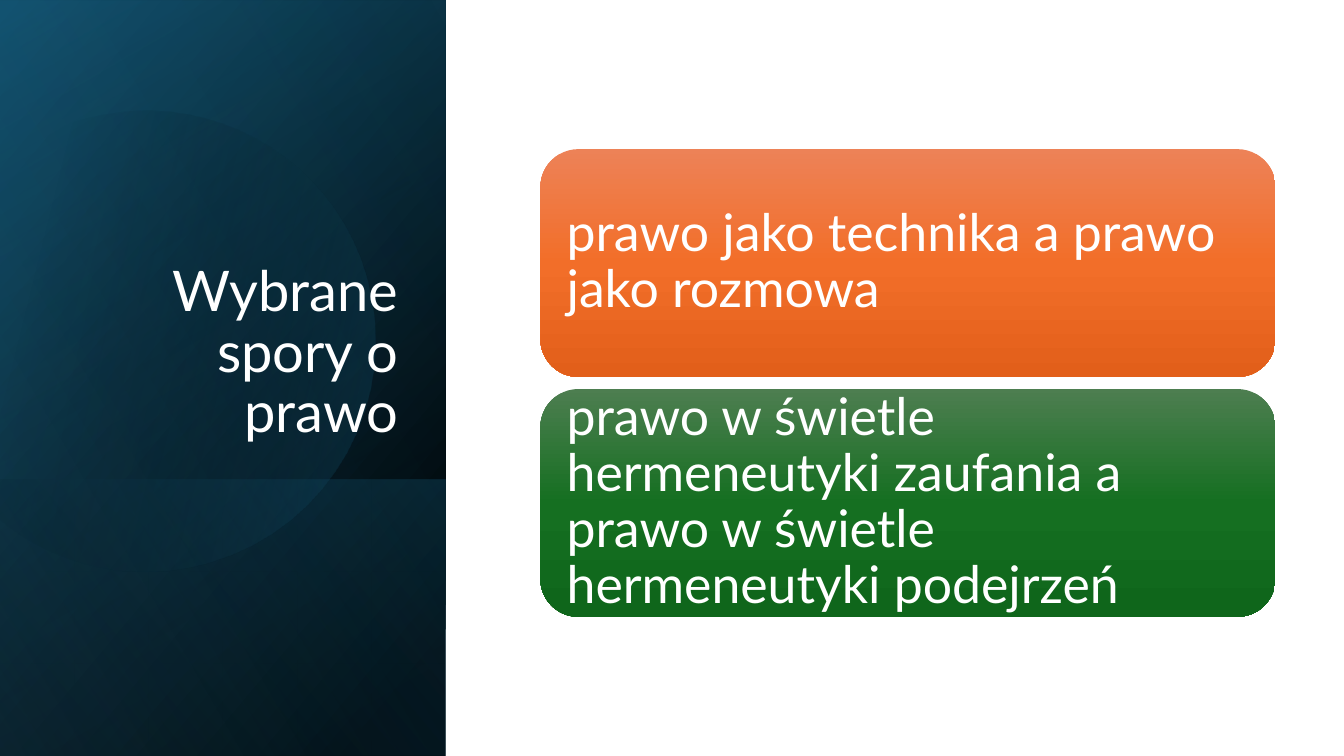
import math
from dataclasses import dataclass

import pptx
import pptx.dml.color
import pptx.enum.shapes
import pptx.enum.text
import pptx.oxml
import pptx.oxml.ns
import pptx.util

Inches = pptx.util.Inches
Shapes = pptx.enum.shapes.MSO_SHAPE
Anchor = pptx.enum.text.MSO_ANCHOR
Align = pptx.enum.text.PP_ALIGN
qn = pptx.oxml.ns.qn
Point = tuple[float, float]


@dataclass
class Stop:
    position: int
    shade: str
    opacity: int = 100


@dataclass
class Gradient:
    angle: int
    stops: list[Stop]


@dataclass
class Pane:
    left: float
    top: float
    width: float
    gradient: Gradient


@dataclass
class Card:
    text: str
    shades: tuple[str, str, str]


PANEL_WIDTH = 4.42
CARD_LEFT, CARD_TOP, CARD_WIDTH, CARD_HEIGHT, CARD_PITCH = 5.36, 1.48, 7.29, 2.26, 2.38

# Side panel layers, each turned a quarter and mirrored
PANES = [
    Pane(-1.54, 1.54, 7.5, Gradient(50, [Stop(8, "000000"), Stop(100, "104862")])),
    Pane(-1.54, 1.55, 7.5, Gradient(30, [Stop(0, "000000", 0), Stop(99, "156082", 46)])),
    Pane(0.84, 3.92, 2.74, Gradient(130, [Stop(2, "156082", 29), Stop(100, "000000", 30)])),
]
GLOSS = Pane(-1.54, 1.54, 7.5, Gradient(120, [Stop(0, "000000", 0), Stop(99, "46B1E1", 11)]))

# Cut disc: curve segments as (control, control, end), tilted about its centre
DISC_TILT = 343.9
DISC_CENTRE = (1.59, 3.35)
DISC_START = (1.49, 1.1)
DISC_RIGHT = [
    ((2.46, 1.12), (3.35, 1.77), (3.63, 2.75)),
    ((3.98, 3.97), (3.28, 5.23), (2.07, 5.58)),
    ((1.31, 5.8), (0.53, 5.61), (-0.03, 5.14)),
]
DISC_EDGE = [(-0.15, 5.03), (-0.15, 1.75), (0, 1.61)]
DISC_LEFT = [
    ((0.23, 1.42), (0.5, 1.28), (0.8, 1.19)),
    ((1.03, 1.13), (1.26, 1.1), (1.49, 1.1)),
]
DISC_GRADIENT = Gradient(30, [Stop(29, "000000", 0), Stop(100, "156082", 43)])

CARDS = [
    Card("prawo jako technika a prawo jako rozmowa", ("ED8257", "F26E29", "E25F1A")),
    Card("prawo w świetle hermeneutyki zaufania a prawo w świetle hermeneutyki podejrzeń",
         ("4D7E50", "156F21", "0F661B")),
]


def colour(shade: str) -> pptx.dml.color.RGBColor:
    return pptx.dml.color.RGBColor.from_string(shade)


def paint(shape, gradient: Gradient) -> None:
    """Fill a shape with a gradient, without outline or shadow."""
    shape.shadow.inherit = False
    shape.line.fill.background()
    shape.fill.gradient()
    fill = shape.element.spPr.find(qn("a:gradFill"))
    fill.find(qn("a:lin")).set("ang", str(gradient.angle * 60000))
    stop_list = fill.find(qn("a:gsLst"))
    for old in list(stop_list):
        stop_list.remove(old)
    for stop in gradient.stops:
        stop_list.append(pptx.oxml.parse_xml(
            f'<a:gs {pptx.oxml.ns.nsdecls("a")} pos="{stop.position * 1000}">'
            f'<a:srgbClr val="{colour(stop.shade)}">'
            f'<a:alpha val="{stop.opacity * 1000}"/></a:srgbClr></a:gs>'))


def write(shape, text: str, size: int, inset: float, anchor, align) -> None:
    frame = shape.text_frame
    margins = {f"margin_{side}": Inches(inset) for side in ("left", "right")}
    if anchor == Anchor.MIDDLE:
        margins |= {f"margin_{side}": Inches(inset) for side in ("top", "bottom")}
    for name, value in {"word_wrap": True, "vertical_anchor": anchor, **margins}.items():
        setattr(frame, name, value)
    para = frame.paragraphs[0]
    para.alignment, para.line_spacing = align, 0.9
    span = para.add_run()
    span.text = text
    for name, value in {"name": "Lato", "size": pptx.util.Pt(size)}.items():
        setattr(span.font, name, value)
    span.font.color.rgb = colour("FFFFFF")


def add_pane(page, pane: Pane) -> None:
    shape = page.shapes.add_shape(
        Shapes.RECTANGLE, Inches(pane.left), Inches(pane.top),
        Inches(pane.width), Inches(PANEL_WIDTH))
    shape.rotation = 90
    shape.element.spPr.find(qn("a:xfrm")).set("flipH", "1")
    paint(shape, pane.gradient)


def trace(start: Point, curves: list, steps: int = 16) -> list[Point]:
    """Sample a chain of cubic curves."""
    points = []
    for first, second, end in curves:
        for step in range(1, steps + 1):
            t = step / steps
            u = 1 - t
            points.append(tuple(
                u**3 * a + 3 * u * u * t * b + 3 * u * t * t * c + t**3 * d
                for a, b, c, d in zip(start, first, second, end)))
        start = end
    return points


def untilt(point: Point) -> Point:
    """Turn a point back about the disc centre, before the tilt is applied."""
    turn = math.radians(360 - DISC_TILT)
    x, y = point[0] - DISC_CENTRE[0], point[1] - DISC_CENTRE[1]
    return (Inches(DISC_CENTRE[0] + x * math.cos(turn) - y * math.sin(turn)),
            Inches(DISC_CENTRE[1] + x * math.sin(turn) + y * math.cos(turn)))


def add_disc(page) -> None:
    outline = [DISC_START, *trace(DISC_START, DISC_RIGHT), *DISC_EDGE,
               *trace(DISC_EDGE[-1], DISC_LEFT)]
    first, *others = [untilt(point) for point in outline]
    builder = page.shapes.build_freeform(*first)
    builder.add_line_segments(others, close=True)
    disc = builder.convert_to_shape()
    disc.rotation = DISC_TILT
    paint(disc, DISC_GRADIENT)


def add_card(page, card: Card, top: float) -> None:
    box = page.shapes.add_shape(
        Shapes.ROUNDED_RECTANGLE, Inches(CARD_LEFT), Inches(top),
        Inches(CARD_WIDTH), Inches(CARD_HEIGHT))
    paint(box, Gradient(90, [Stop(50 * i, shade) for i, shade in enumerate(card.shades)]))
    write(box, card.text, 37, 0.15, Anchor.MIDDLE, Align.LEFT)


def main() -> None:
    deck = pptx.Presentation()
    deck.slide_width, deck.slide_height = Inches(13.33), Inches(7.5)
    page = deck.slides.add_slide(deck.slide_layouts[6])

    # Side panel
    for pane in PANES:
        add_pane(page, pane)
    add_disc(page)
    add_pane(page, GLOSS)

    # Title
    title = page.shapes.add_textbox(Inches(0.64), Inches(1.84), Inches(3.41), Inches(2.62))
    write(title, "Wybrane spory o prawo", 40, 0.1, Anchor.BOTTOM, Align.RIGHT)

    # Cards
    for row, card in enumerate(CARDS):
        add_card(page, card, CARD_TOP + row * CARD_PITCH)

    deck.save("out.pptx")


if __name__ == "__main__":
    main()
